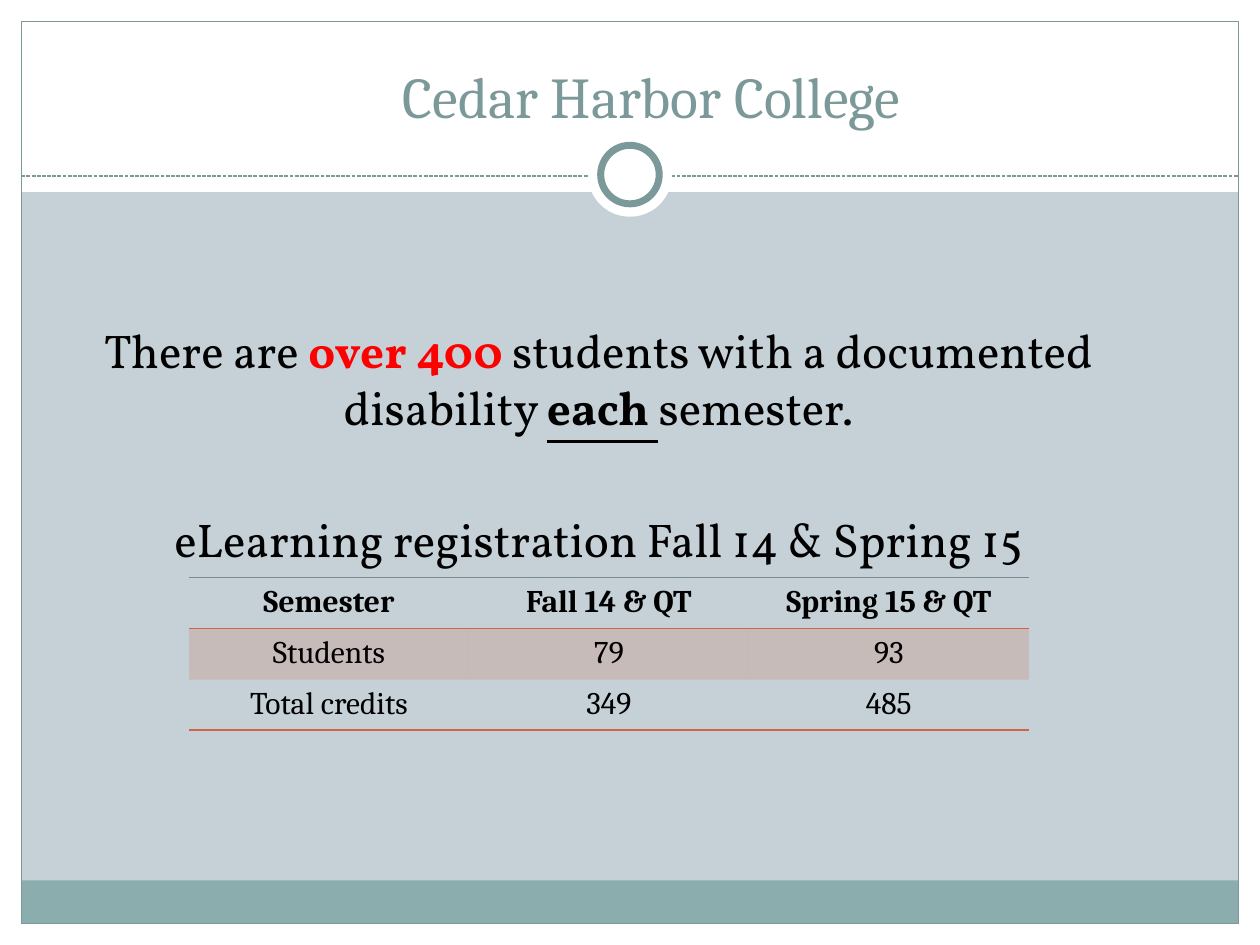
import pptx
import pptx.util
import pptx.dml.color
import pptx.enum.dml
import pptx.enum.shapes
import pptx.enum.text
import pptx.oxml.ns
from lxml import etree

Cm, Pt = pptx.util.Cm, pptx.util.Pt
qn = pptx.oxml.ns.qn
SHAPE = pptx.enum.shapes.MSO_SHAPE
ANCHOR = pptx.enum.text.MSO_ANCHOR
NO_STYLE = "{2D5ABB26-0587-4C30-8999-92F81FD0307C}"
WHITE, TEAL, ACCENT = "FFFFFF", "7C999A", "D16349"


def rgb(value):
    return pptx.dml.color.RGBColor.from_string(value)


def add_run(p, text, size=18, font="Cambria", color="000000", bold=False, underline=False):
    r = p.add_run()
    r.text = text
    r.font.size, r.font.name = Pt(size), font
    r.font.bold, r.font.underline = bold, underline
    r.font.color.rgb = rgb(color)


class SlideBuilder:
    def __init__(self, prs, background):
        self.s = prs.slides.add_slide(prs.slide_layouts[6])
        self.s.background.fill.solid()
        self.s.background.fill.fore_color.rgb = rgb(background)

    def shape(self, kind, x, y, w, h, fill=None, line=None, width=0.75):
        sp = self.s.shapes.add_shape(kind, Cm(x), Cm(y), Cm(w), Cm(h))
        sp.shadow.inherit = False
        if fill:
            sp.fill.solid()
            sp.fill.fore_color.rgb = rgb(fill)
        else:
            sp.fill.background()
        if line:
            sp.line.color.rgb = rgb(line)
            sp.line.width = Pt(width)
        else:
            sp.line.fill.background()

    def dashed_line(self, x1, x2, y):
        cn = self.s.shapes.add_connector(
            pptx.enum.shapes.MSO_CONNECTOR.STRAIGHT, Cm(x1), Cm(y), Cm(x2), Cm(y))
        cn.line.color.rgb = rgb(TEAL)
        cn.line.width = Pt(0.75)
        cn.line.dash_style = pptx.enum.dml.MSO_LINE.SQUARE_DOT
        etree.SubElement(cn._element.spPr, qn("a:effectLst"))

    def text(self, x, y, w, h, paragraphs, anchor=ANCHOR.TOP, **style):
        """Each paragraph is (space before in points, [(text, format), ...])."""
        tf = self.s.shapes.add_textbox(Cm(x), Cm(y), Cm(w), Cm(h)).text_frame
        tf.word_wrap = True
        tf.vertical_anchor = anchor
        for i, (before, runs) in enumerate(paragraphs):
            p = tf.add_paragraph() if i else tf.paragraphs[0]
            p.alignment = pptx.enum.text.PP_ALIGN.CENTER
            p.space_before = Pt(before)
            for text, extra in runs:
                add_run(p, text, **{**style, **extra})

    def cell_border(self, cell, side, color):
        tcPr = cell._tc.get_or_add_tcPr()
        ln = etree.Element(qn("a:" + side), w=str(Pt(1)))
        solid = etree.SubElement(ln, qn("a:solidFill"))
        etree.SubElement(solid, qn("a:srgbClr"), val=color)
        # Borders precede the fill, in the order left, right, top, bottom
        borders = [e for e in tcPr if e.tag.startswith(qn("a:ln"))]
        tcPr.insert(len(borders), ln)

    def table(self, x, y, w, heights, rows, shaded, top):
        columns = len(rows[0])
        frame = self.s.shapes.add_table(
            len(rows), columns, Cm(x), Cm(y), Cm(w), Cm(sum(heights)))
        tbl = frame.table
        tbl.first_row = tbl.horz_banding = False
        tbl._tbl.tblPr.find(qn("a:tableStyleId")).text = NO_STYLE
        for column in tbl.columns:
            column.width = Cm(w / columns)
        for i, values in enumerate(rows):
            tbl.rows[i].height = Cm(heights[i])
            for j, value in enumerate(values):
                cell = tbl.cell(i, j)
                p = cell.text_frame.paragraphs[0]
                p.alignment = pptx.enum.text.PP_ALIGN.CENTER
                add_run(p, value, bold=i == 0)
                if i == shaded:
                    cell.fill.solid()
                    cell.fill.fore_color.rgb = rgb(ACCENT)
                    clr = cell._tc.tcPr.find(".//" + qn("a:srgbClr"))
                    etree.SubElement(clr, qn("a:alpha"), val="20000")
                else:
                    cell.fill.background()
                if i == 0:
                    self.cell_border(cell, "lnT", top)
                if i in (0, len(rows) - 1):
                    self.cell_border(cell, "lnB", ACCENT)


def main():
    width, height, margin = 25.4, 19.05, 0.43
    inner = width - 2 * margin
    prs = pptx.Presentation()
    prs.slide_width, prs.slide_height = Cm(width), Cm(height)
    b = SlideBuilder(prs, "C5D1D7")

    # White margins, title band and footer bar
    for box in ((0, height - margin, width, margin), (0, 0, width, 3.87),
                (0, 0, margin, height), (width - margin, 0, margin, height)):
        b.shape(SHAPE.RECTANGLE, *box, fill=WHITE)
    b.shape(SHAPE.RECTANGLE, margin, 17.75, inner, 0.87, fill="8CADAE")
    b.shape(SHAPE.RECTANGLE, margin, margin, inner, height - 2 * margin, line=TEAL)

    # Divider with ring
    b.dashed_line(margin, width - margin, 3.55)
    for size, line in ((1.7, None), (1.18, TEAL)):
        b.shape(SHAPE.OVAL, (width - size) / 2, 3.52 - size / 2, size, size,
                fill=WHITE, line=line, width=4)

    # Title
    b.text(1.7, -0.43, 22.86, 3.17, [(0, [("Cedar Harbor College", {})])],
           anchor=ANCHOR.BOTTOM, size=33, color=TEAL)

    # Body
    b.text(0.85, 6.35, 22.43, 12.27, [
        (5.4, [("There are ", {}),
               ("over 400 ", {"color": "FF0000", "bold": True}),
               ("students with a documented disability ", {}),
               ("each ", {"bold": True, "underline": True}),
               ("semester.", {})]),
        (43, [("eLearning registration Fall 14 & Spring 15", {})]),
    ], size=27, font="Vollkorn")

    # Registration table
    b.table(3.81, 11.64, 16.93, (1.03, 1.03, 1), [
        ("Semester", "Fall 14 & QT", "Spring 15 & QT"),
        ("Students", "79", "93"),
        ("Total credits", "349", "485"),
    ], shaded=1, top="7C8A8C")

    prs.save("out.pptx")


if __name__ == "__main__":
    main()
